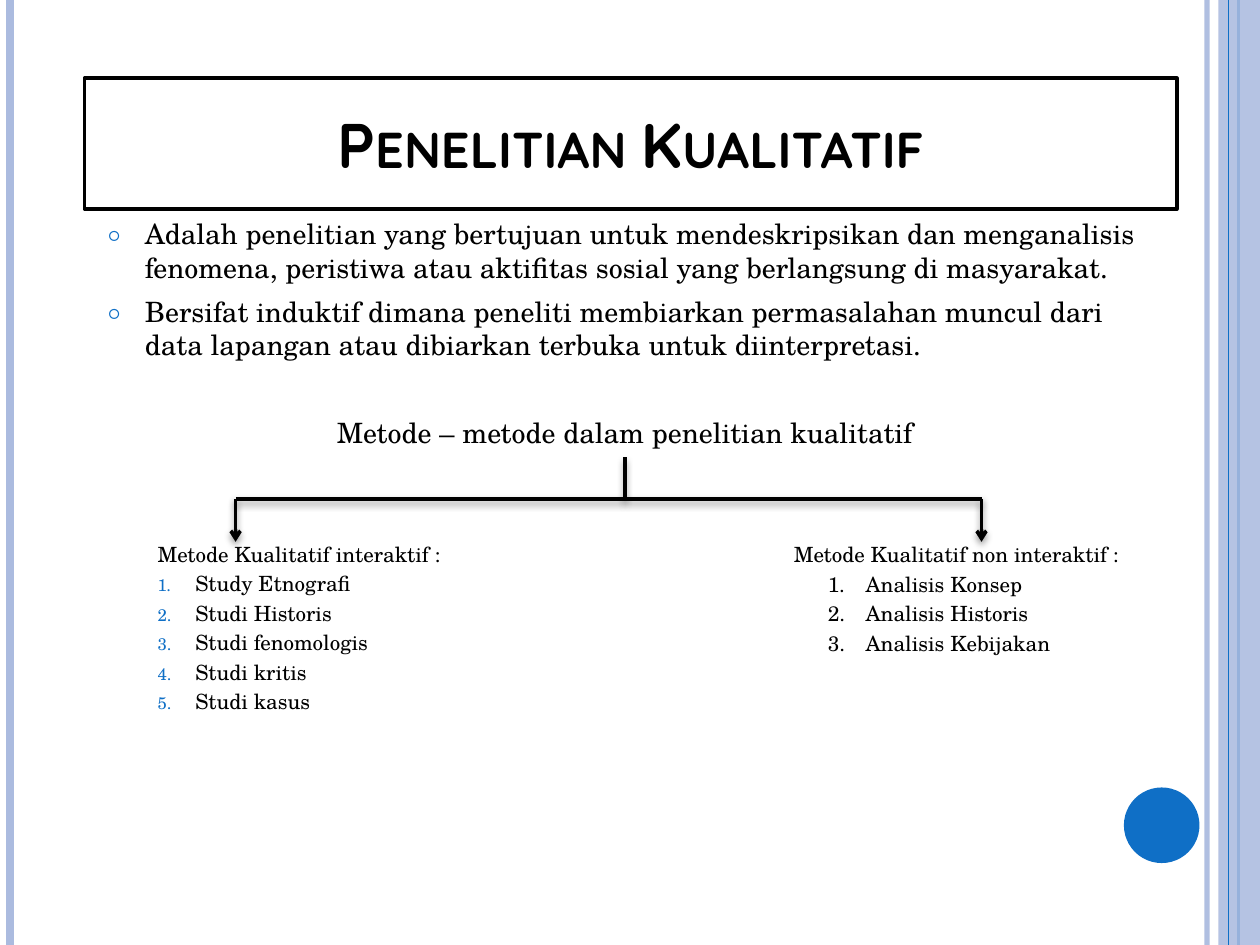
import lxml.etree
import pptx
import pptx.dml.color
import pptx.enum.shapes
import pptx.enum.text
import pptx.oxml.ns
import pptx.util

Inches = pptx.util.Inches
Pt = pptx.util.Pt
RGBColor = pptx.dml.color.RGBColor
Shapes = pptx.enum.shapes.MSO_SHAPE
Align = pptx.enum.text.PP_ALIGN
qn = pptx.oxml.ns.qn

BLACK = RGBColor(0x00, 0x00, 0x00)
WHITE = RGBColor(0xFF, 0xFF, 0xFF)
BLUE = RGBColor(0x0F, 0x6F, 0xC6)
LAVENDER = RGBColor(0xAB, 0xBB, 0xDF)
TITLE_FONT = "Quicksand"
BODY_FONT = "TeX Gyre Schola"


def add_element(parent, tag, **attributes):
    element = lxml.etree.SubElement(parent, qn(tag))
    for name, value in attributes.items():
        element.set(name, str(value))
    return element


def set_alpha(shape, percent):
    for color in shape._element.spPr.iter(qn("a:srgbClr")):
        add_element(color, "a:alpha", val=percent * 1000)


def write_text(paragraph, text, size=16, font=BODY_FONT, bold=False, small_caps=False,
               align=Align.LEFT, level=0, before=6, margin=0, hanging=0,
               bullet=None, bullet_color=BLUE, bullet_size=100):
    run = paragraph.add_run()
    run.text = text
    run.font.size = Pt(size)
    run.font.name = font
    run.font.bold = bold
    run.font.color.rgb = BLACK
    if small_caps:
        run._r.get_or_add_rPr().set("cap", "small")
    paragraph.alignment = align
    paragraph.level = level
    paragraph.line_spacing = 1.0
    paragraph.space_before = Pt(before)
    paragraph.space_after = Pt(0)
    properties = paragraph._p.get_or_add_pPr()
    properties.set("marL", str(Inches(margin)))
    properties.set("indent", str(-Inches(hanging)))
    if bullet is None:
        add_element(properties, "a:buNone")
        return
    add_element(add_element(properties, "a:buClr"), "a:srgbClr", val=bullet_color)
    add_element(properties, "a:buSzPct", val=bullet_size * 1000)
    add_element(properties, "a:buFont", typeface=BODY_FONT)
    if bullet == "number":
        add_element(properties, "a:buAutoNum", type="arabicPeriod")
    else:
        add_element(properties, "a:buChar", char=bullet)


class SlideBuilder:
    """Holds the slide and its style, and adds each kind of element."""

    def __init__(self, presentation):
        self.slide = presentation.slides.add_slide(presentation.slide_layouts[3])

    def line(self, start, end, color=BLACK, width=2, alpha=100, arrow=False, shadow=False):
        points = [Inches(value) for value in (*start, *end)]
        connector = self.slide.shapes.add_connector(
            pptx.enum.shapes.MSO_CONNECTOR.STRAIGHT, *points)
        connector.line.color.rgb = color
        connector.line.width = Pt(width)
        if alpha < 100:
            set_alpha(connector, alpha)
        if arrow:
            add_element(connector.line._get_or_add_ln(), "a:tailEnd", type="arrow")
        effects = add_element(connector._element.spPr, "a:effectLst")
        if shadow:
            outer = add_element(effects, "a:outerShdw", blurRad=Pt(4), dist=Pt(2),
                                dir=5400000, rotWithShape=0)
            shade = add_element(outer, "a:srgbClr", val=BLACK)
            add_element(shade, "a:alpha", val=40000)

    def shape(self, kind, left, top, width, height, color, alpha=100):
        shape = self.slide.shapes.add_shape(
            kind, Inches(left), Inches(top), Inches(width), Inches(height))
        shape.fill.solid()
        shape.fill.fore_color.rgb = color
        shape.line.fill.background()
        shape.shadow.inherit = False
        if alpha < 100:
            set_alpha(shape, alpha)

    def placeholder(self, index, left, top, width, height, items):
        shape = self.slide.placeholders[index]
        shape.left, shape.top = Inches(left), Inches(top)
        shape.width, shape.height = Inches(width), Inches(height)
        frame = shape.text_frame
        frame.auto_size = pptx.enum.text.MSO_AUTO_SIZE.NONE
        frame.word_wrap = True
        for position, (text, style) in enumerate(items):
            paragraph = frame.add_paragraph() if position else frame.paragraphs[0]
            write_text(paragraph, text, **style)
        return shape

    def title(self, text):
        style = dict(size=36, font=TITLE_FONT, bold=True, small_caps=True,
                     align=Align.CENTER, before=0)
        shape = self.placeholder(0, 0.67, 0.62, 8.67, 1.04, [(text, style)])
        shape.text_frame.vertical_anchor = pptx.enum.text.MSO_ANCHOR.MIDDLE
        shape.fill.solid()
        shape.fill.fore_color.rgb = WHITE
        shape.line.color.rgb = BLACK
        shape.line.width = Pt(2)


def add_decoration(builder):
    def rule(x, color, width, alpha=100):
        builder.line((x, 0), (x, 7.5), color, width, alpha)

    rule(9.58, LAVENDER, 3, 93)
    rule(0.08, LAVENDER, 4.5)
    rule(9.83, BLUE, 1.5)
    builder.shape(Shapes.RECTANGLE, 9.67, 0, 0.33, 7.5, LAVENDER, 87)
    rule(9.75, BLUE, 0.75)
    builder.shape(Shapes.OVAL, 8.92, 6.25, 0.6, 0.6, BLUE)


def add_content(builder):
    point = dict(margin=0.3, hanging=0.3, bullet="○", bullet_size=70)
    heading = dict(margin=0.3, hanging=0.3, align=Align.CENTER, before=31)
    method = dict(size=12, level=1, before=2.4)
    numbered = dict(method, hanging=0.3, bullet="number")
    interactive = dict(numbered, margin=0.7, bullet_size=80)
    non_interactive = dict(numbered, margin=0.57, bullet_color=BLACK)

    builder.title("Penelitian Kualitatif")
    builder.placeholder(1, 0.75, 1.67, 8.42, 4.5, [
        ("Adalah penelitian yang bertujuan untuk mendeskripsikan dan menganalisis "
         "fenomena, peristiwa atau aktifitas sosial yang berlangsung di masyarakat.", point),
        ("Bersifat induktif dimana peneliti membiarkan permasalahan muncul dari "
         "data lapangan atau dibiarkan terbuka untuk diinterpretasi.", point),
        ("Metode – metode dalam penelitian kualitatif", heading),
        ("Metode Kualitatif interaktif :", dict(method, margin=0.4, before=52.6)),
        *((name, interactive) for name in (
            "Study Etnografi", "Studi Historis", "Studi fenomologis",
            "Studi kritis", "Studi kasus")),
    ])
    builder.placeholder(2, 6.2, 4.25, 2.97, 1.2, [
        ("Metode Kualitatif non interaktif :", method),
        *((name, non_interactive) for name in (
            "Analisis Konsep", "Analisis Historis", "Analisis Kebijakan")),
    ])


def add_branches(builder):
    center, top, middle, bottom = 4.96, 3.63, 3.96, 4.3
    builder.line((center, top), (center, middle), shadow=True)
    for x in (1.87, 7.79):
        builder.line((center, middle), (x, middle), shadow=True)
        builder.line((x, middle), (x, bottom), arrow=True, shadow=True)


def main():
    presentation = pptx.Presentation()
    presentation.slide_width = Inches(10)
    presentation.slide_height = Inches(7.5)
    builder = SlideBuilder(presentation)
    add_decoration(builder)
    add_content(builder)
    add_branches(builder)
    presentation.save("out.pptx")


if __name__ == "__main__":
    main()
